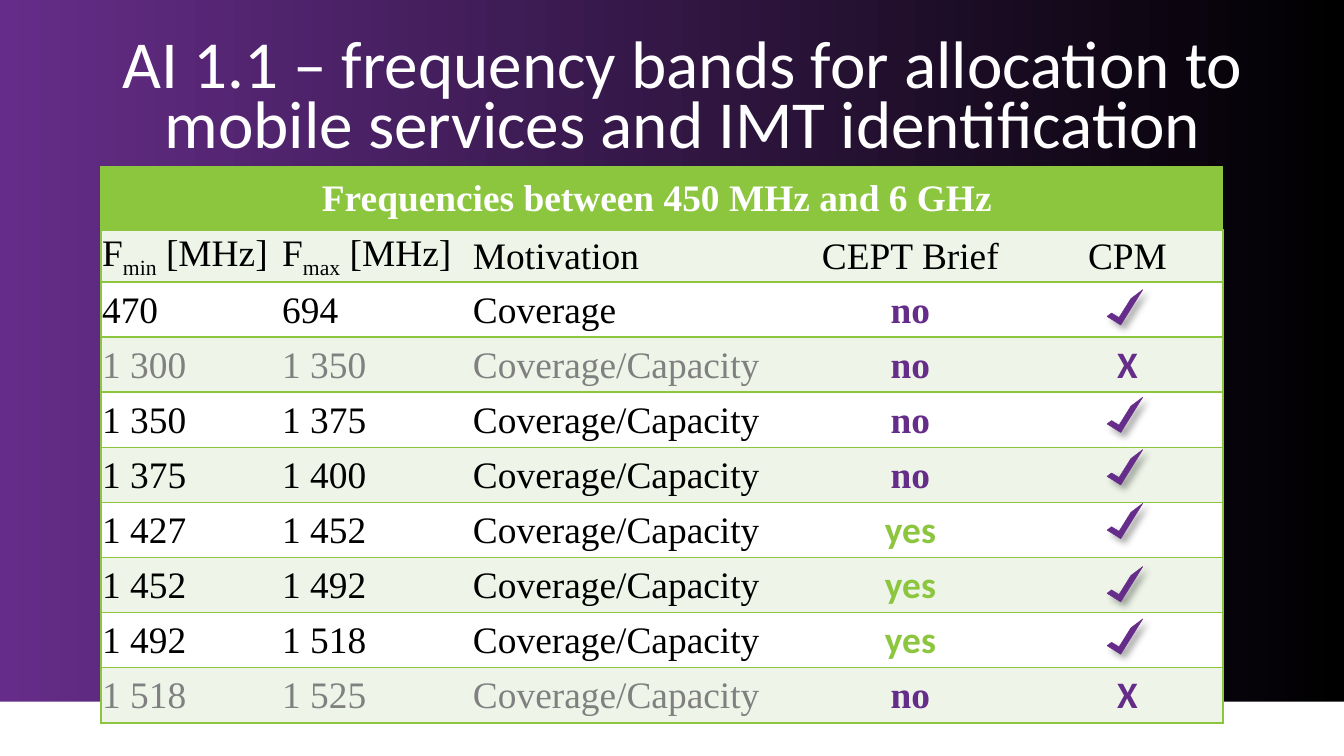
from lxml.etree import SubElement
from pptx import Presentation
from pptx.dml.color import RGBColor
from pptx.enum.shapes import MSO_SHAPE
from pptx.enum.text import MSO_ANCHOR, PP_ALIGN
from pptx.oxml import parse_xml
from pptx.oxml.ns import nsdecls, qn
from pptx.util import Inches, Pt

PURPLE = RGBColor(0x65, 0x2D, 0x89)
GREEN = RGBColor(0x8C, 0xC6, 0x3F)
PALE_GREEN = RGBColor(0xEE, 0xF5, 0xE8)
GREY = RGBColor(0x80, 0x80, 0x80)
WHITE = RGBColor(0xFF, 0xFF, 0xFF)
BLACK = RGBColor(0, 0, 0)

SERIF = "Times New Roman"
SANS = "Calibri"

TITLE = "AI 1.1 – frequency bands for allocation to mobile services and IMT identification"
TABLE_TITLE = "Frequencies between 450 MHz and 6 GHz "
HEADINGS = [("F", "min", " [MHz]"), ("F", "max", " [MHz]"), ("Motivation",), ("CEPT Brief",), ("CPM",)]
BANDS = [
    ("470", "694", "Coverage", "no", ""),
    ("1 300", "1 350", "Coverage/Capacity", "no", "X"),
    ("1 350", "1 375", "Coverage/Capacity", "no", ""),
    ("1 375", "1 400", "Coverage/Capacity", "no", ""),
    ("1 427", "1 452", "Coverage/Capacity", "yes", ""),
    ("1 452", "1 492", "Coverage/Capacity", "yes", ""),
    ("1 492", "1 518", "Coverage/Capacity", "yes", ""),
    ("1 518", "1 525", "Coverage/Capacity", "no", "X"),
]
COLUMN_WIDTHS = [1.34, 1.42, 2.36, 1.81, 1.42]
TABLE_HEIGHT = 4.06
ROW_HEIGHTS = [0.47, 0] + [0.41] * len(BANDS)
CHECK_TOPS = [2.1, 2.9, 3.29, 3.69, 4.16, 4.55]


def set_background(slide):
    fill = slide.background.fill
    fill.gradient()
    fill.gradient_angle = 0
    for stop, color, position in zip(fill.gradient_stops, (PURPLE, BLACK), (0, 1)):
        stop.color.rgb = color
        stop.position = position


def add_footer_band(slide):
    shape = slide.shapes.add_shape(MSO_SHAPE.RECTANGLE, Inches(0), Inches(5.22), Inches(10), Inches(0.41))
    shape.shadow.inherit = False
    shape.fill.solid()
    shape.fill.fore_color.rgb = WHITE
    shape.line.fill.background()


def style_paragraph(paragraph, size, name, color, bold=False, centered=True):
    paragraph.alignment = PP_ALIGN.CENTER if centered else PP_ALIGN.LEFT
    font = paragraph.font
    font.size = Pt(size)
    font.name = name
    font.color.rgb = color
    font.bold = bold


def add_title(slide):
    text_box = slide.shapes.add_textbox(Inches(0.67), Inches(0.21), Inches(8.82), Inches(1.1))
    frame = text_box.text_frame
    frame.word_wrap = True
    frame.vertical_anchor = MSO_ANCHOR.MIDDLE
    paragraph = frame.paragraphs[0]
    paragraph.text = TITLE
    paragraph.line_spacing = Pt(32)
    style_paragraph(paragraph, 36, SANS, WHITE)


def set_borders(cell, visible_edges):
    properties = cell._tc.get_or_add_tcPr()
    for index, edge in enumerate(("L", "R", "T", "B")):
        line = parse_xml(f'<a:ln{edge} {nsdecls("a")} w="12700"/>')
        if edge in visible_edges:
            fill = SubElement(line, qn("a:solidFill"))
            SubElement(fill, qn("a:srgbClr"), val=str(GREEN))
        else:
            SubElement(line, qn("a:noFill"))
        properties.insert(index, line)


def format_cell(cell, fill_color, visible_edges):
    cell.margin_left = cell.margin_right = cell.margin_top = Inches(0.01)
    cell.margin_bottom = 0
    cell.vertical_anchor = MSO_ANCHOR.MIDDLE
    cell.fill.solid()
    cell.fill.fore_color.rgb = fill_color
    set_borders(cell, visible_edges)


def fill_heading(cell, parts, centered):
    paragraph = cell.text_frame.paragraphs[0]
    for index, part in enumerate(parts):
        run = paragraph.add_run()
        run.text = part
        if index == 1:
            run._r.get_or_add_rPr().set("baseline", "-25000")
    style_paragraph(paragraph, 20, SERIF, BLACK, centered=centered)


def fill_value(cell, value, column, excluded):
    paragraph = cell.text_frame.paragraphs[0]
    paragraph.text = value
    if column < 3:
        style_paragraph(paragraph, 20, SERIF, GREY if excluded else BLACK, centered=False)
    else:
        name = SERIF if value == "no" else SANS
        style_paragraph(paragraph, 20, name, GREEN if value == "yes" else PURPLE, bold=True)


def add_frequency_table(slide):
    table = slide.shapes.add_table(
        len(ROW_HEIGHTS), len(COLUMN_WIDTHS), Inches(0.75), Inches(1.24),
        Inches(sum(COLUMN_WIDTHS)), Inches(TABLE_HEIGHT)).table
    for column, width in zip(table.columns, COLUMN_WIDTHS):
        column.width = Inches(width)
    for row, height in zip(table.rows, ROW_HEIGHTS):
        row.height = Inches(height)

    last_column = len(COLUMN_WIDTHS) - 1
    for row_index in range(len(ROW_HEIGHTS)):
        fill_color = GREEN if row_index == 0 else PALE_GREEN if row_index % 2 else WHITE
        for column in range(len(COLUMN_WIDTHS)):
            edges = "TB" + ("L" if column == 0 else "") + ("R" if column == last_column else "")
            format_cell(table.cell(row_index, column), fill_color, edges)

    table.cell(0, 0).merge(table.cell(0, last_column))
    paragraph = table.cell(0, 0).text_frame.paragraphs[0]
    paragraph.text = TABLE_TITLE
    style_paragraph(paragraph, 20, SERIF, WHITE, bold=True)
    for column, parts in enumerate(HEADINGS):
        fill_heading(table.cell(1, column), parts, column >= 3)
    for row_index, band in enumerate(BANDS, start=2):
        for column, value in enumerate(band):
            if value:
                fill_value(table.cell(row_index, column), value, column, band[-1] == "X")


def add_check_mark(slide, top):
    shape = slide.shapes.add_shape(MSO_SHAPE.HALF_FRAME, Inches(8.31), Inches(top), Inches(0.12), Inches(0.31))
    shape.rotation = 212
    shape.fill.solid()
    shape.fill.fore_color.rgb = PURPLE
    shape.line.color.rgb = PURPLE
    shape.line.width = Pt(0.25)
    shape.shadow.inherit = False
    effects = shape._element.spPr.find(qn("a:effectLst"))
    shadow = SubElement(effects, qn("a:outerShdw"), blurRad=str(Pt(4)), dist=str(Pt(3)),
                        dir=str(45 * 60000), algn="tl", rotWithShape="0")
    color = SubElement(shadow, qn("a:srgbClr"), val=str(BLACK))
    SubElement(color, qn("a:alpha"), val="40000")


def main():
    presentation = Presentation()
    presentation.slide_width = Inches(10)
    presentation.slide_height = presentation.slide_width * 9 // 16
    slide = presentation.slides.add_slide(presentation.slide_layouts[6])
    set_background(slide)
    add_footer_band(slide)
    add_title(slide)
    add_frequency_table(slide)
    for top in CHECK_TOPS:
        add_check_mark(slide, top)
    presentation.save("out.pptx")


if __name__ == "__main__":
    main()
